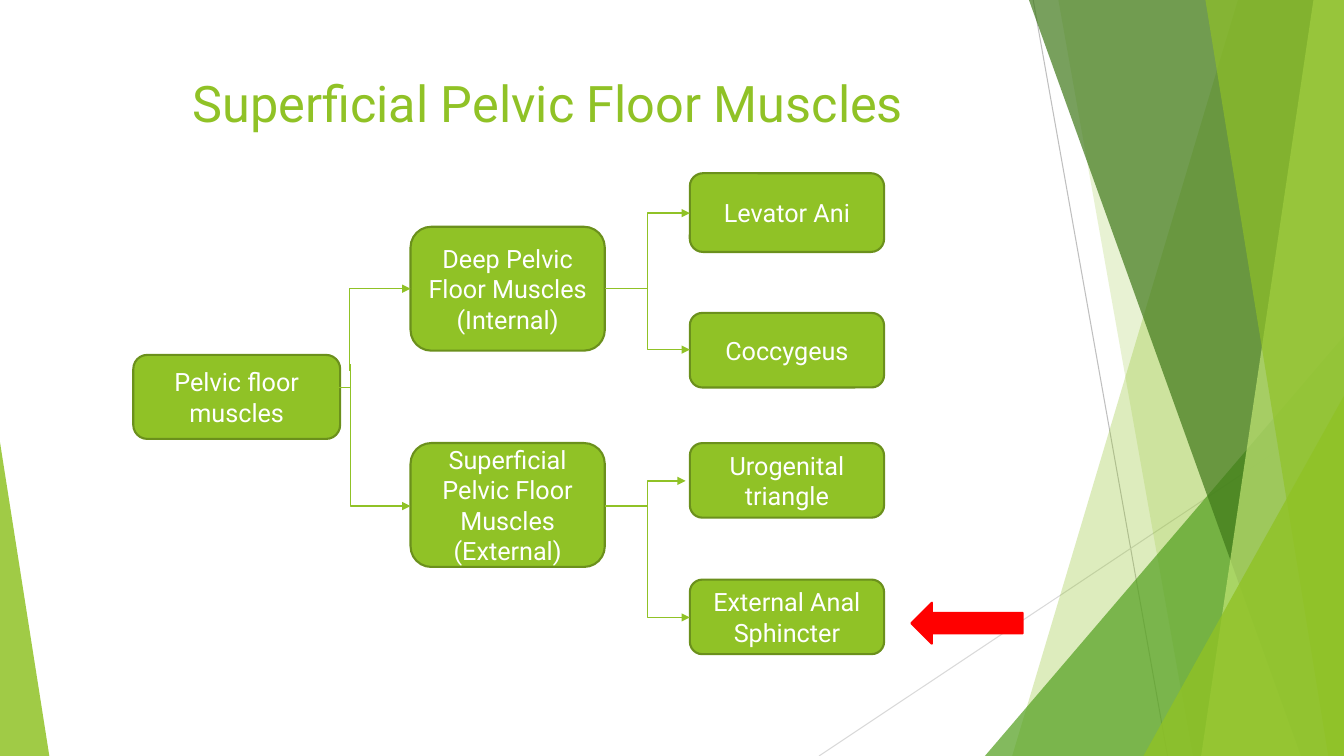
"""Build the pelvic floor muscle hierarchy slide."""
from lxml import etree
from pptx import Presentation
from pptx.dml.color import RGBColor
from pptx.enum.shapes import MSO_CONNECTOR, MSO_SHAPE
from pptx.enum.text import MSO_ANCHOR, PP_ALIGN
from pptx.oxml.ns import qn
from pptx.util import Pt

PX = 9525
WIDTH, HEIGHT = 1280, 720
STRAIGHT, ELBOW = MSO_CONNECTOR.STRAIGHT, MSO_CONNECTOR.ELBOW
TRIANGLE, ROUNDED = MSO_SHAPE.ISOSCELES_TRIANGLE, MSO_SHAPE.ROUNDED_RECTANGLE
RIGHT_ARROW = MSO_SHAPE.RIGHT_ARROW
CENTER, MIDDLE, TOP = PP_ALIGN.CENTER, MSO_ANCHOR.MIDDLE, MSO_ANCHOR.TOP
GREEN, DARK_GREEN, RED, WHITE = "90C226", "6B901C", "FF0000", "FFFFFF"
FONT = "Roboto"


def paint(shape, fill, outline=None, opacity=100):
    """Fill and outline a shape without a shadow."""
    shape.shadow.inherit = False
    shape.fill.solid()
    shape.fill.fore_color.rgb = RGBColor.from_string(fill)
    if opacity < 100:
        tint = shape.fill._xPr.find(qn("a:solidFill"))[0]
        etree.SubElement(tint, qn("a:alpha"), val=str(opacity * 1000))
    if outline:
        shape.line.color.rgb = RGBColor.from_string(outline)
        shape.line.width = Pt(1.5)
    else:
        shape.line.fill.background()


def connect(kind, start, end, color, width):
    """Draw a connector without a shadow."""
    link = slide.shapes.add_connector(kind, *[v * PX for v in start + end])
    link.line.color.rgb = RGBColor.from_string(color)
    link.line.width = Pt(width)
    etree.SubElement(link._element.spPr, qn("a:effectLst"))
    return link


deck = Presentation()
deck.slide_width, deck.slide_height = WIDTH * PX, HEIGHT * PX
slide = deck.slides.add_slide(deck.slide_layouts[6])

connect(STRAIGHT, (984, 0), (1112, HEIGHT), "BFBFBF", 0.75)
connect(STRAIGHT, (WIDTH, 387), (780, HEIGHT), "D9D9D9", 0.75)

# Bands give top and bottom x; triangles give left, top, width and apex.
facets = [
    ((1179, 964), GREEN, 30),
    ((1008, 1136), GREEN, 20),
    ((938, 320, 342, 1), "54A021", 72),
    ((980, 1239), "3F7819", 70),
    ((1251, 1154 - 10), "C0E474", 70),
    ((1148, 1265), GREEN, 65),
    ((1089, 377, 191, 1), GREEN, 80),
    ((0, 421, 47, 0), GREEN, 85),
]
for outline, color, opacity in facets:
    if len(outline) == 2:
        top_x, bottom_x = outline
        band = slide.shapes.build_freeform(top_x, 0, scale=PX)
        band.add_line_segments([(WIDTH, 0), (WIDTH, HEIGHT), (bottom_x, HEIGHT)])
        facet = band.convert_to_shape()
    else:
        left, top, width, apex = outline
        facet = slide.shapes.add_shape(
            TRIANGLE, left * PX, top * PX, width * PX, (HEIGHT - top) * PX)
        facet.adjustments[0] = apex
    paint(facet, color, opacity=opacity)

title = slide.shapes.add_textbox(71 * PX, 64 * PX, 902 * PX, 138 * PX)
title.text_frame.word_wrap = True
title.text_frame.vertical_anchor = TOP
heading = title.text_frame.paragraphs[0]
heading.text = "Superficial Pelvic Floor Muscles"
heading.alignment = CENTER
heading.font.name, heading.font.size = FONT, Pt(36)
heading.font.color.rgb = RGBColor.from_string(GREEN)

muscles = [
    ("Pelvic floor muscles", 127, 338, 197, 80),
    ("Deep Pelvic Floor Muscles (Internal)", 391, 216, 185, 118),
    ("Superficial Pelvic Floor Muscles (External)", 391, 422, 185, 118),
    ("Levator Ani", 657, 165, 185, 75),
    ("Coccygeus", 657, 298, 185, 71),
    ("Urogenital triangle", 657, 422, 185, 71),
    ("External Anal Sphincter", 657, 552, 185, 71),
]
for name, *frame in muscles:
    muscle = slide.shapes.add_shape(ROUNDED, *[v * PX for v in frame])
    paint(muscle, GREEN, DARK_GREEN)
    muscle.text_frame.word_wrap = True
    muscle.text_frame.vertical_anchor = MIDDLE
    label = muscle.text_frame.paragraphs[0]
    label.text = name
    label.alignment = CENTER
    label.font.name, label.font.size = FONT, Pt(18)
    label.font.color.rgb = RGBColor.from_string(WHITE)

branches = [
    ((333, 353), (391, 275), 0),
    ((334, 347), (391, 482), 0),
    ((576, 275), (657, 203), 50),
    ((576, 275), (657, 333), 50),
    ((580, 482), (653, 458), 50),
    ((576, 482), (657, 588), 50),
]
for start, end, bend in branches:
    branch = connect(ELBOW, start, end, GREEN, 1)
    bends = branch._element.spPr.find(qn("a:prstGeom")).get_or_add_avLst()
    etree.SubElement(bends, qn("a:gd"), name="adj1", fmla=f"val {bend * 1000}")
    etree.SubElement(branch.line._get_or_add_ln(), qn("a:tailEnd"), type="triangle")
connect(STRAIGHT, (333, 369), (300, 369), GREEN, 1)

pointer = slide.shapes.add_shape(RIGHT_ARROW, 868 * PX, 574 * PX, 106 * PX, 39 * PX)
pointer.rotation = 180
paint(pointer, RED, RED)

deck.save("out.pptx")
